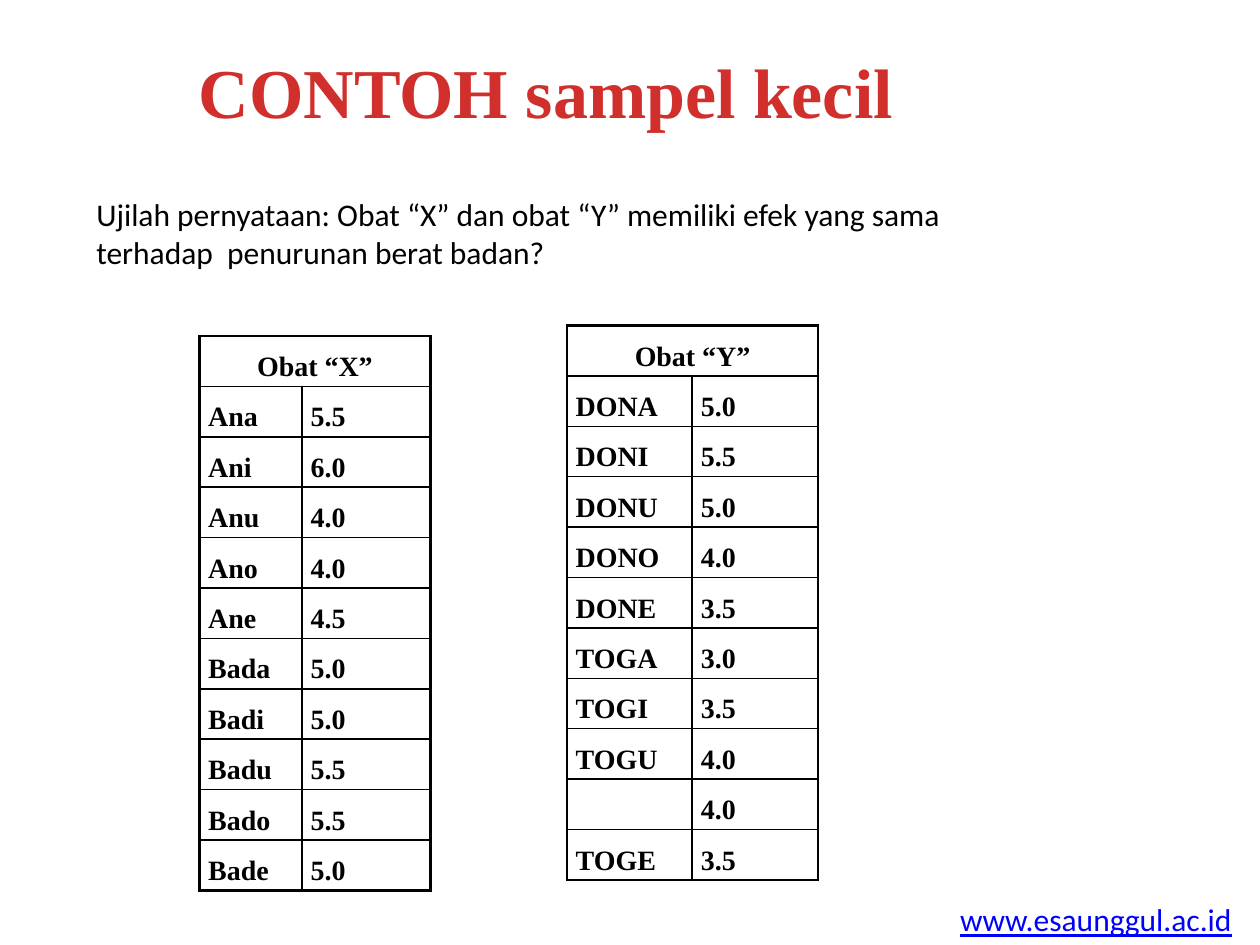
from copy import deepcopy

from lxml.etree import SubElement
from pptx import Presentation
from pptx.dml.color import RGBColor
from pptx.enum.text import MSO_AUTO_SIZE as AutoSize, PP_ALIGN as Align
from pptx.oxml.ns import qn
from pptx.util import Pt

COLORS = {
    "black": "000000",
    "link": "0000FF",
    "red_light": "FC7C7A",
    "red": "D02F2C",
    "red_dark": "C70500",
}
TITLE_STOPS = [(0, "red_light"), (0.75, "red"), (1, "red_dark")]
SERIF, SANS = "Times New Roman", "Calibri"

DRUG_X = [
    ("Ana", "5.5"), ("Ani", "6.0"), ("Anu", "4.0"), ("Ano", "4.0"), ("Ane", "4.5"),
    ("Bada", "5.0"), ("Badi", "5.0"), ("Badu", "5.5"), ("Bado", "5.5"), ("Bade", "5.0"),
]
DRUG_Y = [
    ("DONA", "5.0"), ("DONI", "5.5"), ("DONU", "5.0"), ("DONO", "4.0"), ("DONE", "3.5"),
    ("TOGA", "3.0"), ("TOGI", "3.5"), ("TOGU", "4.0"), ("", "4.0"), ("TOGE", "3.5"),
]


def color(name):
    return RGBColor.from_string(COLORS[name])


def write(frame, text, font=SANS, size=18, ink="black", bold=False,
          underline=False, align=Align.LEFT, spacing=None):
    """Fill the first paragraph of a text frame and return its run."""
    para = frame.paragraphs[0]
    para.alignment = align
    if spacing:
        para.line_spacing = spacing
    para.font.size = Pt(size)
    span = para.add_run()
    span.text = text
    span.font.name = font
    span.font.size = Pt(size)
    span.font.bold = bold
    span.font.underline = underline
    span.font.color.rgb = color(ink)
    return span


def add_text(page, left, top, width, height, text, wrap=True, **style):
    box = page.shapes.add_textbox(Pt(left), Pt(top), Pt(width), Pt(height))
    box.text_frame.word_wrap = wrap
    box.text_frame.auto_size = AutoSize.SHAPE_TO_FIT_TEXT
    return write(box.text_frame, text, **style)


def shade_title(span):
    """Give a run the vertical red gradient."""
    fill = span.font.fill
    fill.gradient()
    fill.gradient_angle = 270
    stop_list = span.font._element.find(qn("a:gradFill")).find(qn("a:gsLst"))
    stop_list.append(deepcopy(stop_list[-1]))
    for stop, (position, name) in zip(fill.gradient_stops, TITLE_STOPS):
        stop.position = position
        stop.color.rgb = color(name)


def set_borders(cell, **widths):
    """Draw black cell borders; widths are keyed by side."""
    properties = cell._tc.get_or_add_tcPr()
    for index, side in enumerate(("L", "R", "T", "B")):
        line = properties.makeelement(qn(f"a:ln{side}"), {"w": str(Pt(widths[side]))})
        fill = SubElement(line, qn("a:solidFill"))
        SubElement(fill, qn("a:srgbClr"), val=COLORS["black"])
        properties.insert(index, line)


def add_drug_table(page, left, top, column_widths, heading, records):
    rows = [(heading, "")] + records
    last_row = len(rows) - 1
    table = page.shapes.add_table(
        len(rows), 2, Pt(left), Pt(top), Pt(sum(column_widths)), Pt(278.6)).table
    table.first_row = table.horz_banding = False
    for column, width in zip(table.columns, column_widths):
        column.width = Pt(width)
    table.cell(0, 0).merge(table.cell(0, 1))

    for row, record in enumerate(rows):
        for col, text in enumerate(record):
            cell = table.cell(row, col)
            cell.fill.background()
            cell.margin_left = cell.margin_right = Pt(5)
            cell.margin_top = cell.margin_bottom = 0
            # Thick outer frame, thin inner grid
            set_borders(
                cell,
                L=1.5 if col == 0 else 1,
                R=1.5 if col == 1 or row == 0 else 1,
                T=1.5 if row == 0 else 1,
                B=1.5 if row == last_row else 1)
            if text:
                write(cell.text_frame, text, font=SERIF, size=16, bold=True, spacing=1.5,
                      align=Align.CENTER if row == 0 else Align.LEFT)
            else:
                cell.text_frame.paragraphs[0].font.size = Pt(16)


def main():
    deck = Presentation()
    deck.slide_width, deck.slide_height = Pt(720), Pt(540)
    page = deck.slides.add_slide(deck.slide_layouts[6])

    # Web address in the corner
    add_text(page, 541.5, 511, 171, 29, "www.esaunggul.ac.id",
             wrap=False, ink="link", underline=True)

    # Title and question
    title = add_text(page, 36, 24, 552, 55.5, "CONTOH sampel kecil",
                     font=SERIF, size=40, ink="red", bold=True, align=Align.CENTER)
    shade_title(title)
    add_text(page, 48, 108, 540, 73,
             "Ujilah pernyataan: Obat “X” dan obat “Y” memiliki efek yang sama  "
             "terhadap  penurunan berat badan?")

    # Samples
    add_drug_table(page, 114, 192, (58.5, 73.5), "Obat “X”", DRUG_X)
    add_drug_table(page, 324, 186, (71.5, 72), "Obat “Y”", DRUG_Y)

    deck.save("out.pptx")


if __name__ == "__main__":
    main()
